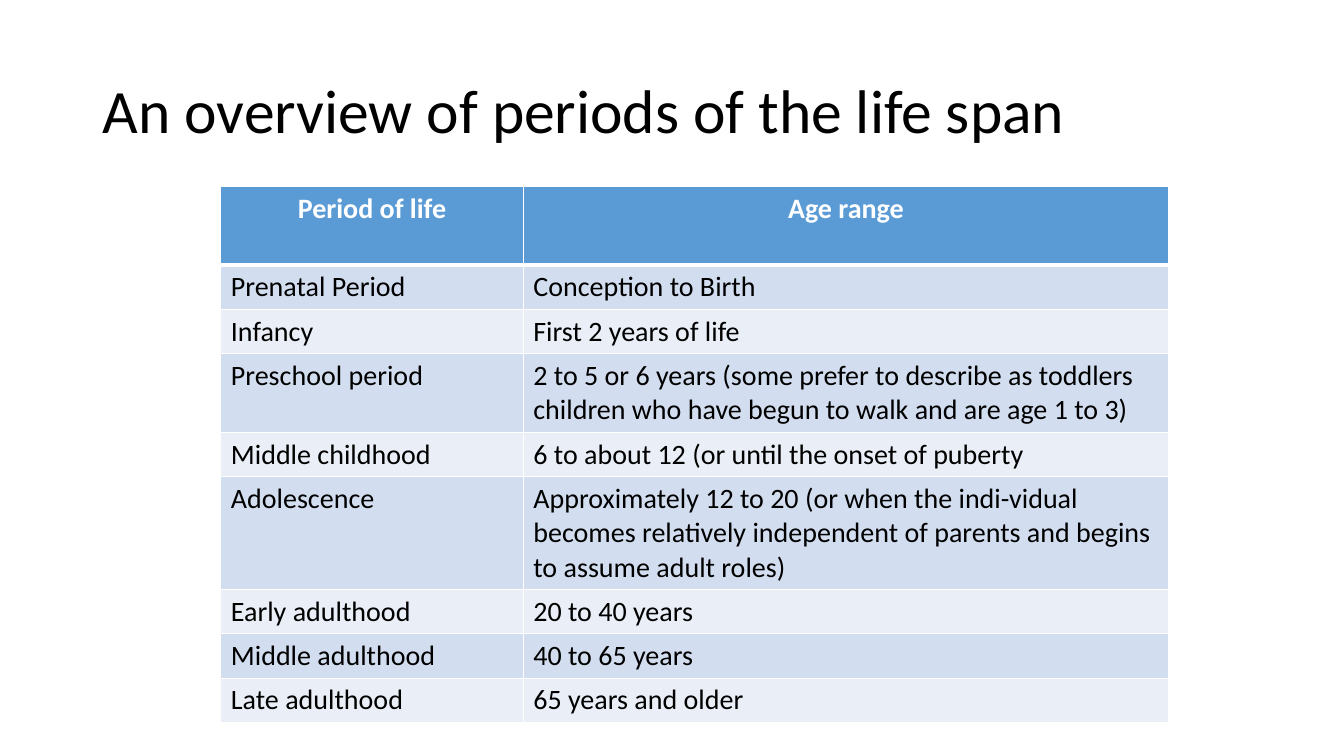
import pptx
import pptx.util
import pptx.dml.color
import pptx.enum.text
import pptx.oxml
import pptx.oxml.ns

Inches = pptx.util.Inches
Pt = pptx.util.Pt
RGBColor = pptx.dml.color.RGBColor
ALIGN = pptx.enum.text.PP_ALIGN
ANCHOR = pptx.enum.text.MSO_ANCHOR

BLACK = RGBColor(0x00, 0x00, 0x00)
WHITE = RGBColor(0xFF, 0xFF, 0xFF)
HEADER_BLUE = RGBColor(0x5B, 0x9B, 0xD5)
BANDS = [RGBColor(0xEA, 0xEF, 0xF7), RGBColor(0xD2, 0xDE, 0xEF)]

TITLE_FORMAT = {"name": "Calibri", "size": Pt(44)}
HEADER_FORMAT = {"name": "Calibri", "size": Pt(20), "bold": True}
BODY_FORMAT = {"name": "Calibri", "size": Pt(20), "bold": False}

PERIODS = [
    ("Period of life", "Age range", 0.78),
    ("Prenatal Period", "Conception to Birth", 0.44),
    ("Infancy", "First 2 years of life", 0.44),
    ("Preschool period", "2 to 5 or 6 years (some prefer to describe as toddlers "
     "children who have begun to walk and are age 1 to 3)", 0.78),
    ("Middle childhood", "6 to about 12 (or until the onset of puberty", 0.44),
    ("Adolescence", "Approximately 12 to 20 (or when the indi-vidual becomes relatively "
     "independent of parents and begins to assume adult roles)", 1.12),
    ("Early adulthood", "20 to 40 years", 0.44),
    ("Middle adulthood", "40 to 65 years", 0.44),
    ("Late adulthood", "65 years and older", 0.44),
]


def write_text(para, text, values, color):
    span = para.add_run()
    span.text = text
    for name, value in values.items():
        setattr(span.font, name, value)
    span.font.color.rgb = color


def add_border(cell, side, points):
    border = pptx.oxml.parse_xml(
        f'<a:{side} {pptx.oxml.ns.nsdecls("a")} w="{Pt(points)}">'
        f'<a:solidFill><a:srgbClr val="{WHITE}"/></a:solidFill></a:{side}>'
    )
    cell._tc.get_or_add_tcPr().append(border)


deck = pptx.Presentation()
deck.slide_width = Inches(13.33)
deck.slide_height = Inches(7.5)
page = deck.slides.add_slide(deck.slide_layouts[6])

title_box = page.shapes.add_textbox(Inches(0.92), Inches(0.4), Inches(11.5), Inches(1.45))
title_box.text_frame.word_wrap = True
title_box.text_frame.vertical_anchor = ANCHOR.MIDDLE
title_para = title_box.text_frame.paragraphs[0]
title_para.line_spacing = 0.9
write_text(title_para, "An overview of periods of the life span", TITLE_FORMAT, BLACK)

table_height = sum(height for period, ages, height in PERIODS)
table = page.shapes.add_table(
    len(PERIODS), 2, Inches(2.19), Inches(1.85), Inches(9.4), Inches(table_height)
).table
for column, width in zip(table.columns, (3, 6.4)):
    column.width = Inches(width)

for row, (period, ages, height) in enumerate(PERIODS):
    table.rows[row].height = Inches(height)
    header = row == 0
    borders = {
        "lnL": 1,
        "lnR": 1,
        "lnT": 3 if row == 1 else 1,
        "lnB": 3 if header else 1,
    }
    for column, text in enumerate((period, ages)):
        cell = table.cell(row, column)
        for side, points in borders.items():
            add_border(cell, side, points)
        cell.fill.solid()
        cell.fill.fore_color.rgb = HEADER_BLUE if header else BANDS[row % 2]
        para = cell.text_frame.paragraphs[0]
        para.alignment = ALIGN.CENTER if header else ALIGN.LEFT
        write_text(para, text, HEADER_FORMAT if header else BODY_FORMAT,
                   WHITE if header else BLACK)

deck.save("out.pptx")
